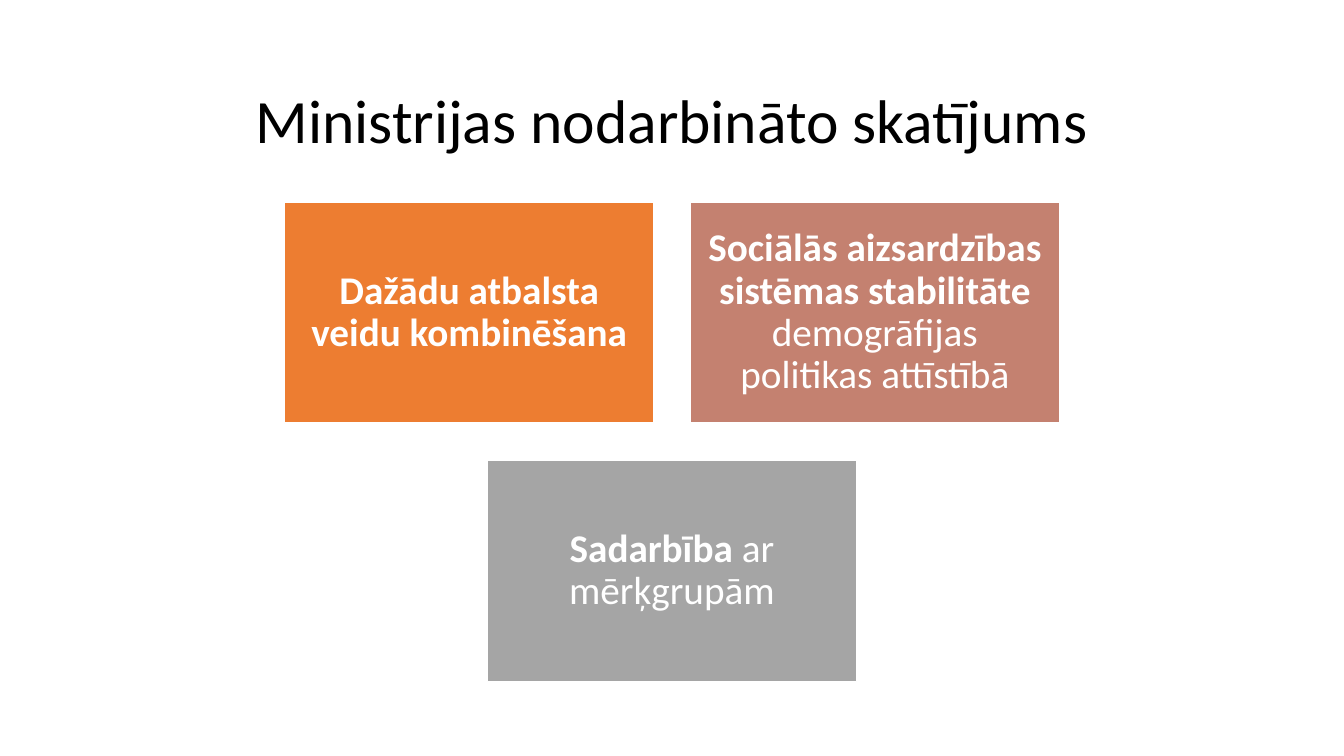
"""Build a slide with a title and three centred theme boxes."""
from dataclasses import dataclass

from pptx import Presentation
from pptx.dml.color import RGBColor
from pptx.enum.shapes import MSO_SHAPE as Shape
from pptx.enum.text import MSO_ANCHOR as Anchor, PP_ALIGN as Align
from pptx.slide import Slide
from pptx.text.text import TextFrame
from pptx.util import Pt

BLACK = RGBColor(0x00, 0x00, 0x00)
WHITE = RGBColor(0xFF, 0xFF, 0xFF)
ORANGE = RGBColor(0xED, 0x7D, 0x31)
ROSE = RGBColor(0xC4, 0x81, 0x70)
GREY = RGBColor(0xA5, 0xA5, 0xA5)

FONT = "Calibri"
SLIDE_WIDTH, SLIDE_HEIGHT = 960, 540
BOX_WIDTH, BOX_HEIGHT, GAP = 263.5, 158.1, 26.35
BOXES_TOP = 144.2
BOX_INSET = 8.4


@dataclass(frozen=True)
class TextRun:
    text: str
    bold: bool = False


@dataclass(frozen=True)
class ThemeBox:
    fill: RGBColor
    runs: tuple[TextRun, ...]


TITLE = (TextRun("Ministrijas nodarbināto skatījums"),)
ROWS = (
    (
        ThemeBox(ORANGE, (TextRun("Dažādu atbalsta veidu kombinēšana", True),)),
        ThemeBox(ROSE, (
            TextRun("Sociālās aizsardzības sistēmas stabilitāte ", True),
            TextRun("demogrāfijas politikas attīstībā"),
        )),
    ),
    (
        ThemeBox(GREY, (TextRun("Sadarbība ", True), TextRun("ar mērķgrupām"))),
    ),
)


def write_text(frame: TextFrame, runs: tuple[TextRun, ...], size: float, color: RGBColor) -> None:
    frame.word_wrap = True
    frame.vertical_anchor = Anchor.MIDDLE
    paragraph = frame.paragraphs[0]
    paragraph.alignment = Align.CENTER
    paragraph.line_spacing = 0.9
    for text_run in runs:
        run = paragraph.add_run()
        run.text = text_run.text
        run.font.name = FONT
        run.font.size = Pt(size)
        run.font.bold = text_run.bold
        run.font.color.rgb = color


def add_title(slide: Slide) -> None:
    title = slide.shapes.add_textbox(Pt(66), Pt(43.9), Pt(828), Pt(89.3))
    write_text(title.text_frame, TITLE, 44, BLACK)


def add_theme_box(slide: Slide, box: ThemeBox, left: float, top: float) -> None:
    shape = slide.shapes.add_shape(
        Shape.RECTANGLE, Pt(left), Pt(top), Pt(BOX_WIDTH), Pt(BOX_HEIGHT)
    )
    shape.shadow.inherit = False
    shape.fill.solid()
    shape.fill.fore_color.rgb = box.fill
    shape.line.color.rgb = WHITE
    shape.line.width = Pt(1)
    frame = shape.text_frame
    frame.margin_left = frame.margin_right = Pt(BOX_INSET)
    frame.margin_top = frame.margin_bottom = Pt(BOX_INSET)
    write_text(frame, box.runs, 28, WHITE)


def add_theme_rows(slide: Slide) -> None:
    for row_index, row in enumerate(ROWS):
        row_width = len(row) * (BOX_WIDTH + GAP) - GAP
        row_left = (SLIDE_WIDTH - row_width) / 2
        top = BOXES_TOP + row_index * (BOX_HEIGHT + GAP)
        for column, box in enumerate(row):
            add_theme_box(slide, box, row_left + column * (BOX_WIDTH + GAP), top)


def main() -> None:
    presentation = Presentation()
    presentation.slide_width = Pt(SLIDE_WIDTH)
    presentation.slide_height = Pt(SLIDE_HEIGHT)
    slide = presentation.slides.add_slide(presentation.slide_layouts[6])
    add_title(slide)
    add_theme_rows(slide)
    presentation.save("out.pptx")


if __name__ == "__main__":
    main()
